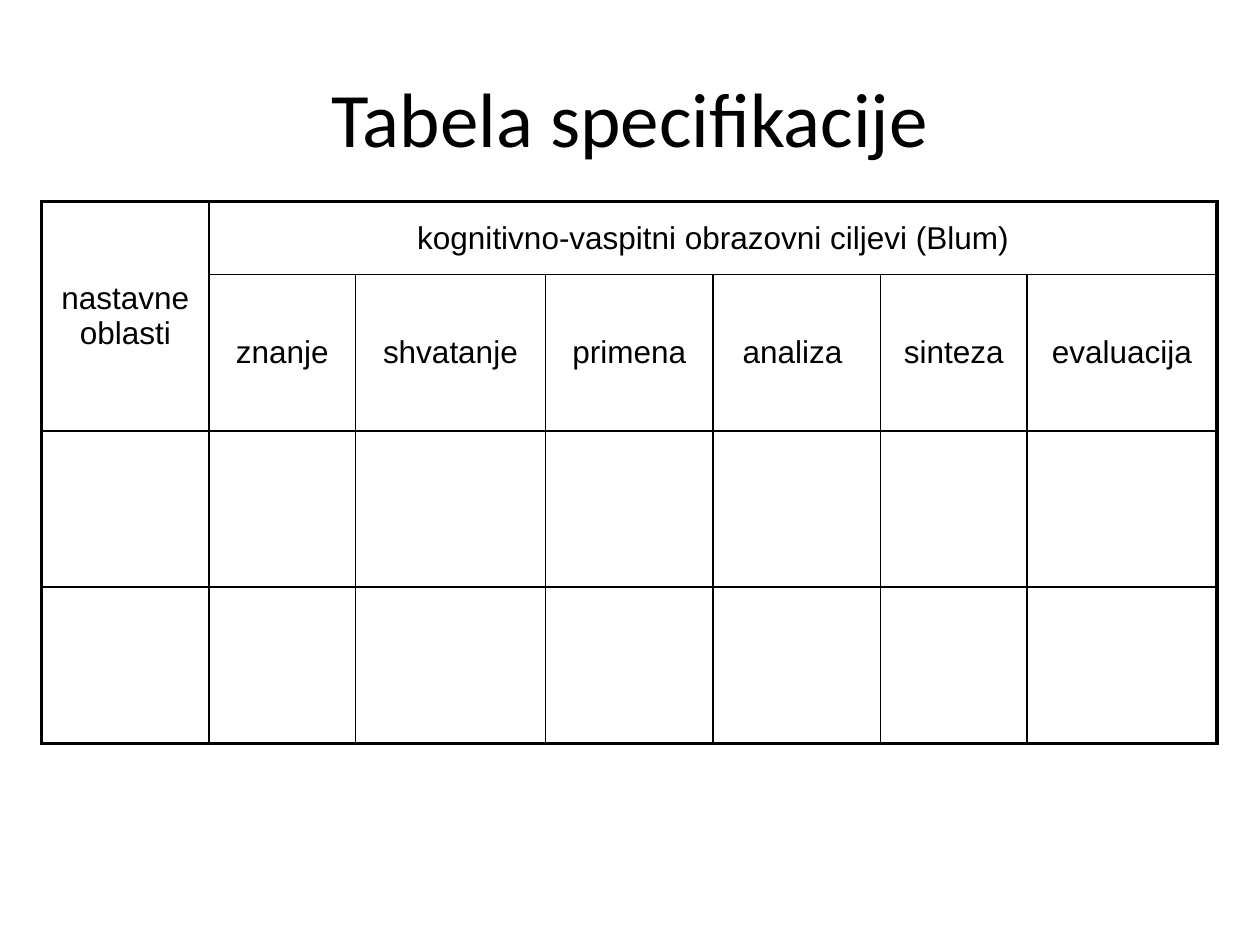
from dataclasses import dataclass

from lxml.etree import SubElement
from pptx import Presentation
from pptx.dml.color import RGBColor
from pptx.enum.text import MSO_ANCHOR, PP_ALIGN
from pptx.oxml.ns import qn
from pptx.slide import Slide
from pptx.table import Table, _Cell as Cell
from pptx.text.text import TextFrame
from pptx.util import Inches, Pt


@dataclass(frozen=True)
class Theme:
    ink: RGBColor = RGBColor(0, 0, 0)
    title_font: str = "Calibri"
    table_font: str = "Arial"
    title_size: float = 44
    table_size: float = 18
    inner_line: float = 1
    outer_line: float = 2.25


@dataclass(frozen=True)
class Heading:
    row: int
    column: int
    text: str
    row_span: int = 1
    column_span: int = 1


THEME = Theme()
COLUMN_WIDTHS = [1.33, 1.16, 1.51, 1.33, 1.33, 1.16, 1.51]
ROW_HEIGHTS = [0.58, 1.24, 1.24, 1.24]
LEVELS = ["znanje", "shvatanje", "primena", "analiza ", "sinteza", "evaluacija"]
HEADINGS = [
    Heading(0, 0, "nastavne oblasti", row_span=2),
    Heading(0, 1, "kognitivno-vaspitni obrazovni ciljevi (Blum)", column_span=len(LEVELS)),
    *(Heading(1, column, level) for column, level in enumerate(LEVELS, start=1)),
]


def write_centred(frame: TextFrame, text: str, font_name: str, size: float) -> None:
    paragraph = frame.paragraphs[0]
    paragraph.text = text
    paragraph.alignment = PP_ALIGN.CENTER
    paragraph.font.name = font_name
    paragraph.font.size = Pt(size)
    paragraph.font.color.rgb = THEME.ink


def add_title(slide: Slide, text: str) -> None:
    box = slide.shapes.add_textbox(Inches(0.5), Inches(0.3), Inches(9), Inches(1.25))
    box.text_frame.word_wrap = True
    box.text_frame.vertical_anchor = MSO_ANCHOR.MIDDLE
    write_centred(box.text_frame, text, THEME.title_font, THEME.title_size)


def set_borders(cell: Cell, outer_sides: dict[str, bool]) -> None:
    """Draw a thick line on the sides at the table's edge and a thin one elsewhere."""
    properties = cell._tc.get_or_add_tcPr()
    for side, is_outer in outer_sides.items():
        width = THEME.outer_line if is_outer else THEME.inner_line
        line = SubElement(properties, qn(f"a:ln{side}"), w=str(Pt(width)))
        fill = SubElement(line, qn("a:solidFill"))
        SubElement(fill, qn("a:srgbClr"), val=str(THEME.ink))


def style_cells(table: Table) -> None:
    row_count, column_count = len(ROW_HEIGHTS), len(COLUMN_WIDTHS)
    for row in range(row_count):
        for column in range(column_count):
            cell = table.cell(row, column)
            set_borders(cell, {
                "L": column == 0,
                "R": column + cell.span_width == column_count,
                "T": row == 0,
                "B": row + cell.span_height == row_count,
            })
            cell.fill.background()
            cell.vertical_anchor = MSO_ANCHOR.MIDDLE


def add_specification_table(slide: Slide) -> None:
    table = slide.shapes.add_table(
        len(ROW_HEIGHTS), len(COLUMN_WIDTHS), Inches(0.33), Inches(1.6),
        Inches(sum(COLUMN_WIDTHS)), Inches(sum(ROW_HEIGHTS)),
    ).table
    table.first_row = table.horz_banding = False
    for column, width in zip(table.columns, COLUMN_WIDTHS):
        column.width = Inches(width)
    for row, height in zip(table.rows, ROW_HEIGHTS):
        row.height = Inches(height)
    for heading in HEADINGS:
        cell = table.cell(heading.row, heading.column)
        if heading.row_span > 1 or heading.column_span > 1:
            cell.merge(table.cell(heading.row + heading.row_span - 1,
                                  heading.column + heading.column_span - 1))
        write_centred(cell.text_frame, heading.text, THEME.table_font, THEME.table_size)
    style_cells(table)


def main() -> None:
    presentation = Presentation()
    presentation.slide_width, presentation.slide_height = Inches(10), Inches(7.5)
    slide = presentation.slides.add_slide(presentation.slide_layouts[6])
    add_title(slide, "Tabela specifikacije")
    add_specification_table(slide)
    presentation.save("out.pptx")


if __name__ == "__main__":
    main()
